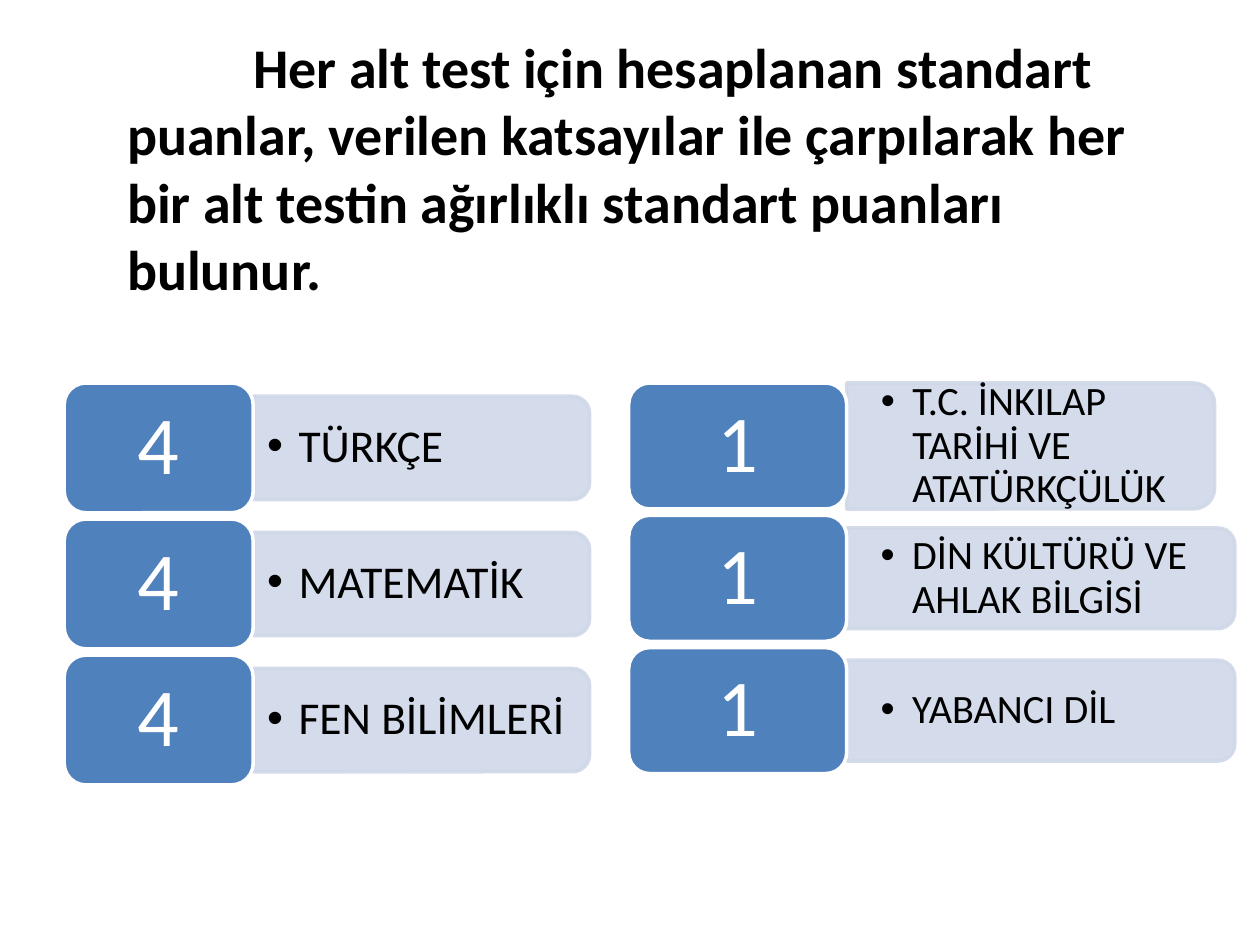
from lxml.etree import SubElement
from pptx import Presentation
from pptx.dml.color import RGBColor
from pptx.enum.shapes import MSO_SHAPE
from pptx.enum.text import MSO_ANCHOR, PP_ALIGN
from pptx.oxml.ns import qn
from pptx.util import Inches, Pt

FONT = "Calibri"
BLACK, WHITE, BLUE, PALE_BLUE = "000000", "FFFFFF", "4F81BD", "D0D8E8"
HEADING = ("Her alt test için hesaplanan standart puanlar, verilen katsayılar ile "
           "çarpılarak her bir alt testin ağırlıklı standart puanları bulunur.")

# Each subject: coefficient, name, bar width, bar height (inches)
GROUPS = [
    dict(left=0.51, tile=(1.5, 1.03), pitch=1.08, tile_size=47, name_size=26,
         inset=(0.11, 0.05),
         subjects=[("4", "TÜRKÇE", 2.67, 0.82),
                   ("4", "MATEMATİK", 2.67, 0.82),
                   ("4", "FEN BİLİMLERİ", 2.67, 0.82)]),
    dict(left=4.99, tile=(1.73, 1.0), pitch=1.05, tile_size=46, name_size=23,
         inset=(0.27, 0.14),
         subjects=[("1", "T.C. İNKILAP TARİHİ VE ATATÜRKÇÜLÜK", 2.92, 1.0),
                   ("1", "DİN KÜLTÜRÜ VE AHLAK BİLGİSİ", 3.08, 0.8),
                   ("1", "YABANCI DİL", 3.08, 0.8)]),
]
GROUPS_TOP = 3.04
BULLET_INDENT = 0.25


def rgb(color):
    return RGBColor.from_string(color)


def write(shape, text, size, color, inset=(0.1, 0.05), bold=False):
    frame = shape.text_frame
    frame.word_wrap = True
    frame.margin_left = frame.margin_right = Inches(inset[0])
    frame.margin_top = frame.margin_bottom = Inches(inset[1])
    paragraph = frame.paragraphs[0]
    paragraph.text = text
    font = paragraph.font
    font.name, font.size, font.bold = FONT, Pt(size), bold
    font.color.rgb = rgb(color)
    return paragraph


def add_box(shapes, kind, center_x, center_y, width, height, fill, line):
    box = shapes.add_shape(kind, Inches(center_x - width / 2), Inches(center_y - height / 2),
                           Inches(width), Inches(height))
    box.shadow.inherit = False
    box.fill.solid()
    box.fill.fore_color.rgb = rgb(fill)
    box.line.color.rgb = rgb(line)
    box.line.width = Pt(2)
    return box


def add_bar(shapes, left, center_y, width, height):
    """Pale bar rounded on its right side: a top-rounded box turned a quarter."""
    bar = add_box(shapes, MSO_SHAPE.ROUND_2_SAME_RECTANGLE, left + width / 2, center_y,
                  height, width, PALE_BLUE, PALE_BLUE)
    bar.rotation = 90
    for color in bar._element.spPr.iter(qn("a:srgbClr")):
        SubElement(color, qn("a:alpha"), val="90000")


def add_name(shapes, left, center_y, width, height, text, size, inset):
    box = shapes.add_textbox(Inches(left), Inches(center_y - height / 2),
                             Inches(width), Inches(height))
    paragraph = write(box, text, size, BLACK, inset)
    box.text_frame.vertical_anchor = MSO_ANCHOR.MIDDLE
    paragraph.line_spacing = 0.9
    properties = paragraph._p.get_or_add_pPr()
    properties.set("marL", str(Inches(BULLET_INDENT)))
    properties.set("indent", str(-Inches(BULLET_INDENT)))
    SubElement(properties, qn("a:buFont"), typeface="Arial")
    SubElement(properties, qn("a:buChar"), char="•")
    # The schema wants the default font after the bullet
    properties.append(properties.find(qn("a:defRPr")))


def add_tile(shapes, left, center_y, width, height, coefficient, size):
    tile = add_box(shapes, MSO_SHAPE.ROUNDED_RECTANGLE, left + width / 2, center_y,
                   width, height, BLUE, WHITE)
    paragraph = write(tile, coefficient, size, WHITE, (0.2, 0.1))
    tile.text_frame.vertical_anchor = MSO_ANCHOR.MIDDLE
    paragraph.alignment = PP_ALIGN.CENTER
    paragraph.line_spacing = 0.9


def add_group(shapes, group):
    tile_width, tile_height = group["tile"]
    bar_left = group["left"] + tile_width
    for row, (coefficient, name, width, height) in enumerate(group["subjects"]):
        center_y = GROUPS_TOP + tile_height / 2 + row * group["pitch"]
        add_bar(shapes, bar_left, center_y, width, height)
        add_name(shapes, bar_left, center_y, width - 0.04, height - 0.08, name,
                 group["name_size"], group["inset"])
        add_tile(shapes, group["left"], center_y, tile_width, tile_height,
                 coefficient, group["tile_size"])


def main():
    deck = Presentation()
    deck.slide_width, deck.slide_height = Inches(10), Inches(7.5)
    shapes = deck.slides.add_slide(deck.slide_layouts[6]).shapes
    heading = shapes.add_textbox(Inches(0.91), Inches(0.21), Inches(8.19), Inches(2.26))
    paragraph = write(heading, HEADING, 32, BLACK, bold=True)
    paragraph._p.get_or_add_pPr().set("indent", str(Inches(1)))
    for group in GROUPS:
        add_group(shapes, group)
    deck.save("out.pptx")


if __name__ == "__main__":
    main()
